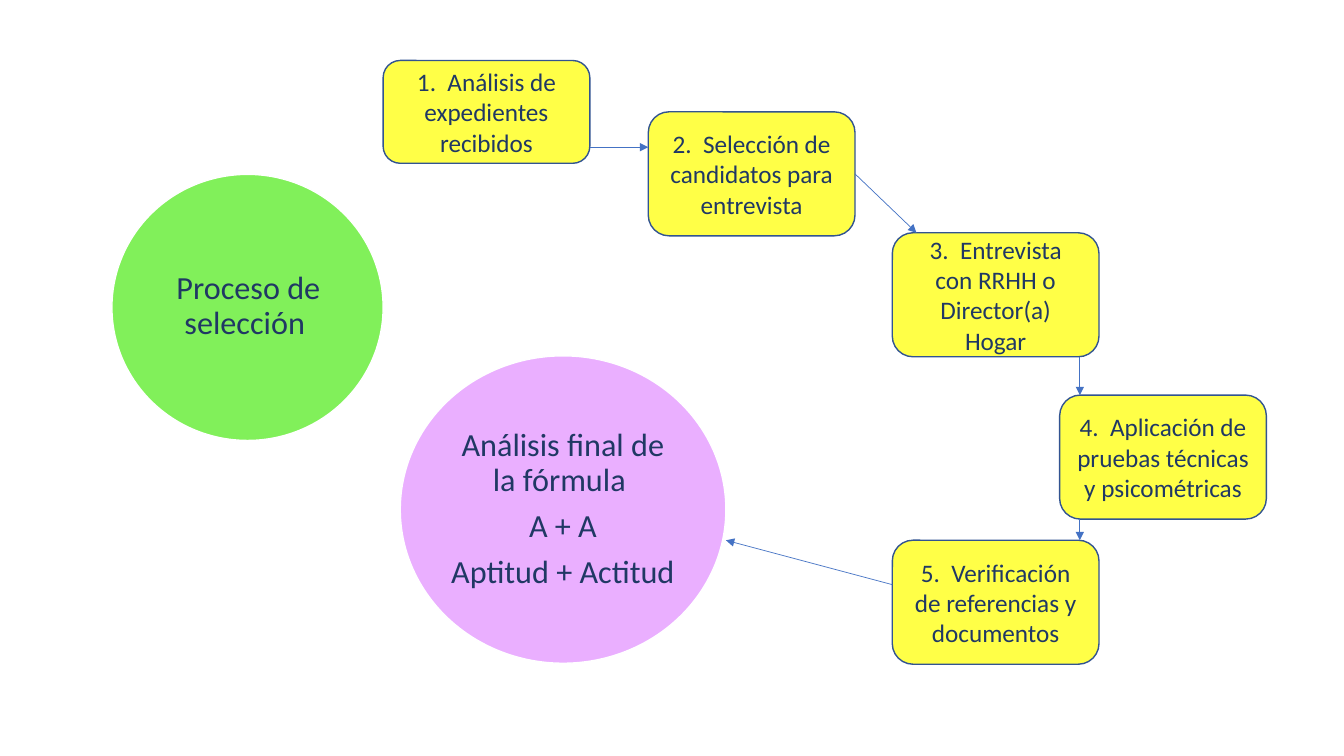
from dataclasses import dataclass

from lxml import etree
from pptx import Presentation
from pptx.dml.color import RGBColor
from pptx.enum import shapes, text
from pptx.oxml import ns
from pptx.util import Inches, Pt


@dataclass(frozen=True)
class Theme:
    """Colours, font and type sizes of the slide."""
    font: str = "Calibri"
    ink: str = "203864"
    green: str = "81F05A"
    violet: str = "EAAFFF"
    yellow: str = "FFFF47"
    border: str = "325491"
    arrow: str = "4472C4"
    white: str = "FFFFFF"
    circle_size: float = 23
    step_size: float = 18


THEME = Theme()
STEP_W, STEP_H = 2.05, 1.23
TITLE = "Proceso de selección "
TITLE_CIRCLE = (1.11, 1.73, 2.69, 2.64)
TITLE_BOX = (1.51, 2.11, 1.91, 1.86)
FORMULA = ["Análisis final de la fórmula ", "A + A", "Aptitud + Actitud"]
FORMULA_CIRCLE = (3.97, 3.53, 3.23, 3.05)
STEPS = [
    ("1.  Análisis de expedientes recibidos", 3.8, 0.6, 1.02),
    ("2.  Selección de candidatos para entrevista", 6.43, 1.11, STEP_H),
    ("3.  Entrevista con RRHH o Director(a) Hogar", 8.85, 2.31, STEP_H),
    ("4.  Aplicación de pruebas técnicas y psicométricas", 10.51, 3.92, STEP_H),
    ("5.  Verificación de referencias y documentos", 8.85, 5.36, STEP_H),
]
ARROWS = [
    (5.85, 1.46, 6.43, 1.46),
    (8.48, 1.73, 9.09, 2.31),
    (10.71, 3.54, 10.71, 3.92),
    (10.71, 5.15, 10.71, 5.36),
    (8.85, 5.8, 7.2, 5.36),
]


def rgb(value):
    """Turn a hex string into a colour."""
    return RGBColor.from_string(value)


def write(s, lines, size, inset=None, spacing=None, after=0):
    """Put centred paragraphs into a shape."""
    tf = s.text_frame
    tf.text = "\n".join(lines)
    tf.word_wrap = True
    tf.auto_size = text.MSO_AUTO_SIZE.NONE
    tf.vertical_anchor = text.MSO_ANCHOR.MIDDLE
    if inset is not None:
        tf.margin_left = tf.margin_right = Inches(inset)
        tf.margin_top = tf.margin_bottom = Inches(inset)
    for p in tf.paragraphs:
        p.alignment = text.PP_ALIGN.CENTER
        p.space_before = Pt(0)
        p.space_after = Pt(after)
        if spacing:
            p.line_spacing = spacing
        for r in p.runs:
            r.font.name = THEME.font
            r.font.size = Pt(size)
            r.font.color.rgb = rgb(THEME.ink)


def write_circle(s, lines):
    """Write text in the style used inside the circles."""
    write(s, lines, THEME.circle_size, inset=0.03, spacing=0.9,
          after=round(0.35 * THEME.circle_size))


def add_box(slide, kind, box, fill, line):
    """Add a filled and outlined preset shape."""
    s = slide.shapes.add_shape(kind, *map(Inches, box))
    s.shadow.inherit = False
    s.fill.solid()
    s.fill.fore_color.rgb = rgb(fill)
    s.line.color.rgb = rgb(line)
    s.line.width = Pt(1)
    return s


def add_arrow(slide, points):
    """Add a thin straight arrow."""
    c = slide.shapes.add_connector(shapes.MSO_CONNECTOR.STRAIGHT, *map(Inches, points))
    c.line.color.rgb = rgb(THEME.arrow)
    c.line.width = Pt(0.5)
    etree.SubElement(c.line._get_or_add_ln(), ns.qn("a:tailEnd"), type="triangle")
    etree.SubElement(c._element.spPr, ns.qn("a:effectLst"))
    return c


def main():
    """Build the selection process slide."""
    prs = Presentation()
    prs.slide_width, prs.slide_height = Inches(13.33), Inches(7.5)
    slide = prs.slides.add_slide(prs.slide_layouts[5])

    oval = shapes.MSO_SHAPE.OVAL
    circle = add_box(slide, oval, TITLE_CIRCLE, THEME.green, THEME.white)
    title = slide.shapes.title
    title.left, title.top, title.width, title.height = map(Inches, TITLE_BOX)
    write_circle(title, [TITLE])
    circle._element.addnext(title._element)

    steps = []
    for label, x, y, h in STEPS:
        s = add_box(slide, shapes.MSO_SHAPE.ROUNDED_RECTANGLE, (x, y, STEP_W, h),
                    THEME.yellow, THEME.border)
        write(s, [label], THEME.step_size)
        steps.append(s)

    formula = add_box(slide, oval, FORMULA_CIRCLE, THEME.violet, THEME.white)
    write_circle(formula, FORMULA)

    arrows = [add_arrow(slide, points) for points in ARROWS]
    arrows[1].begin_connect(steps[1], 3)
    prs.save("out.pptx")


if __name__ == "__main__":
    main()
